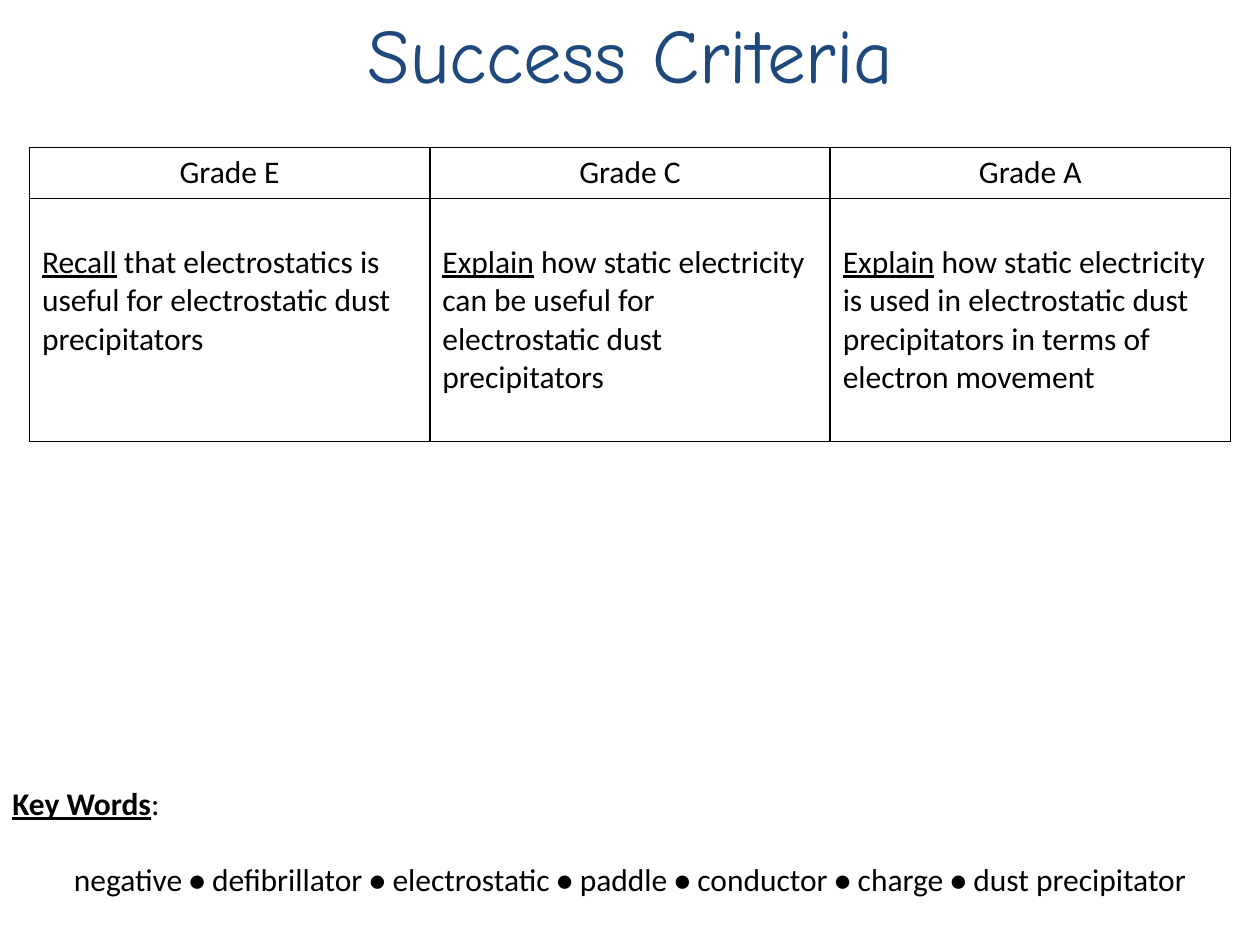
from lxml.etree import SubElement
from pptx import Presentation
from pptx.dml.color import RGBColor
from pptx.enum.text import MSO_ANCHOR, PP_ALIGN
from pptx.oxml.ns import qn
from pptx.util import Pt

COLOURS = {"title": "1F497D", "text": "000000", "border": "000000"}
TITLE_FORMAT = {"name": "Comic Neue", "size": Pt(44)}
BODY_FORMAT = {"name": "Calibri", "size": Pt(18)}
BLANK_LINE = Pt(22)

CRITERIA = [
    ("Grade E", "Recall",
     " that electrostatics is useful for electrostatic dust precipitators"),
    ("Grade C", "Explain",
     " how static electricity can be useful for electrostatic dust precipitators"),
    ("Grade A", "Explain",
     " how static electricity is used in electrostatic dust precipitators"
     " in terms of electron movement"),
]
KEY_WORDS = ["negative", "defibrillator", "electrostatic", "paddle",
             "conductor", "charge", "dust precipitator"]


def add_span(para, text, colour="text", **font_format):
    span = para.add_run()
    span.text = text
    span.font.color.rgb = RGBColor.from_string(COLOURS[colour])
    for name, value in font_format.items():
        setattr(span.font, name, value)


def add_text_frame(page, box):
    frame = page.shapes.add_textbox(*box).text_frame
    frame.word_wrap = True
    frame.vertical_anchor = MSO_ANCHOR.TOP
    return frame


def style_cell(cell):
    cell.fill.background()
    properties = cell._tc.get_or_add_tcPr()
    for index, side in enumerate(("lnL", "lnR", "lnT", "lnB")):
        line = properties.makeelement(qn(f"a:{side}"), {"w": str(Pt(1))})
        fill = SubElement(line, qn("a:solidFill"))
        SubElement(fill, qn("a:srgbClr"), val=COLOURS["border"])
        properties.insert(index, line)


def add_title(page, box):
    para = add_text_frame(page, box).paragraphs[0]
    para.alignment = PP_ALIGN.CENTER
    add_span(para, "Success Criteria", "title", **TITLE_FORMAT)


def add_criteria(page, box):
    left, top, width, height = box
    table = page.shapes.add_table(2, len(CRITERIA), left, top, width, height).table
    table.first_row = table.horz_banding = False
    table.rows[0].height = Pt(29.2)
    table.rows[1].height = height - Pt(29.2)
    for column, (grade, verb, outcome) in enumerate(CRITERIA):
        heading, body = table.cell(0, column), table.cell(1, column)
        style_cell(heading)
        style_cell(body)

        para = heading.text_frame.paragraphs[0]
        para.alignment = PP_ALIGN.CENTER
        add_span(para, grade, **BODY_FORMAT)

        body.margin_top = Pt(3.6) + BLANK_LINE
        para = body.text_frame.paragraphs[0]
        add_span(para, verb, underline=True, **BODY_FORMAT)
        add_span(para, outcome, **BODY_FORMAT)


def add_key_words(page, box):
    frame = add_text_frame(page, box)
    heading = frame.paragraphs[0]
    add_span(heading, "Key Words", bold=True, underline=True, **BODY_FORMAT)
    add_span(heading, ":", **BODY_FORMAT)

    para = frame.add_paragraph()
    para.alignment = PP_ALIGN.CENTER
    para.space_before = BLANK_LINE
    for index, word in enumerate(KEY_WORDS):
        if index:
            add_span(para, " • ", bold=True, **BODY_FORMAT)
        add_span(para, word, **BODY_FORMAT)


def main():
    deck = Presentation()
    deck.slide_width, deck.slide_height = Pt(720), Pt(540)
    page = deck.slides.add_slide(deck.slide_layouts[6])
    add_title(page, (Pt(36.5), Pt(0), Pt(648), Pt(90)))
    add_criteria(page, (Pt(16.8), Pt(84.3), Pt(686.4), Pt(168)))
    add_key_words(page, (Pt(0), Pt(444.2), Pt(720), Pt(72.7)))
    deck.save("out.pptx")


if __name__ == "__main__":
    main()
